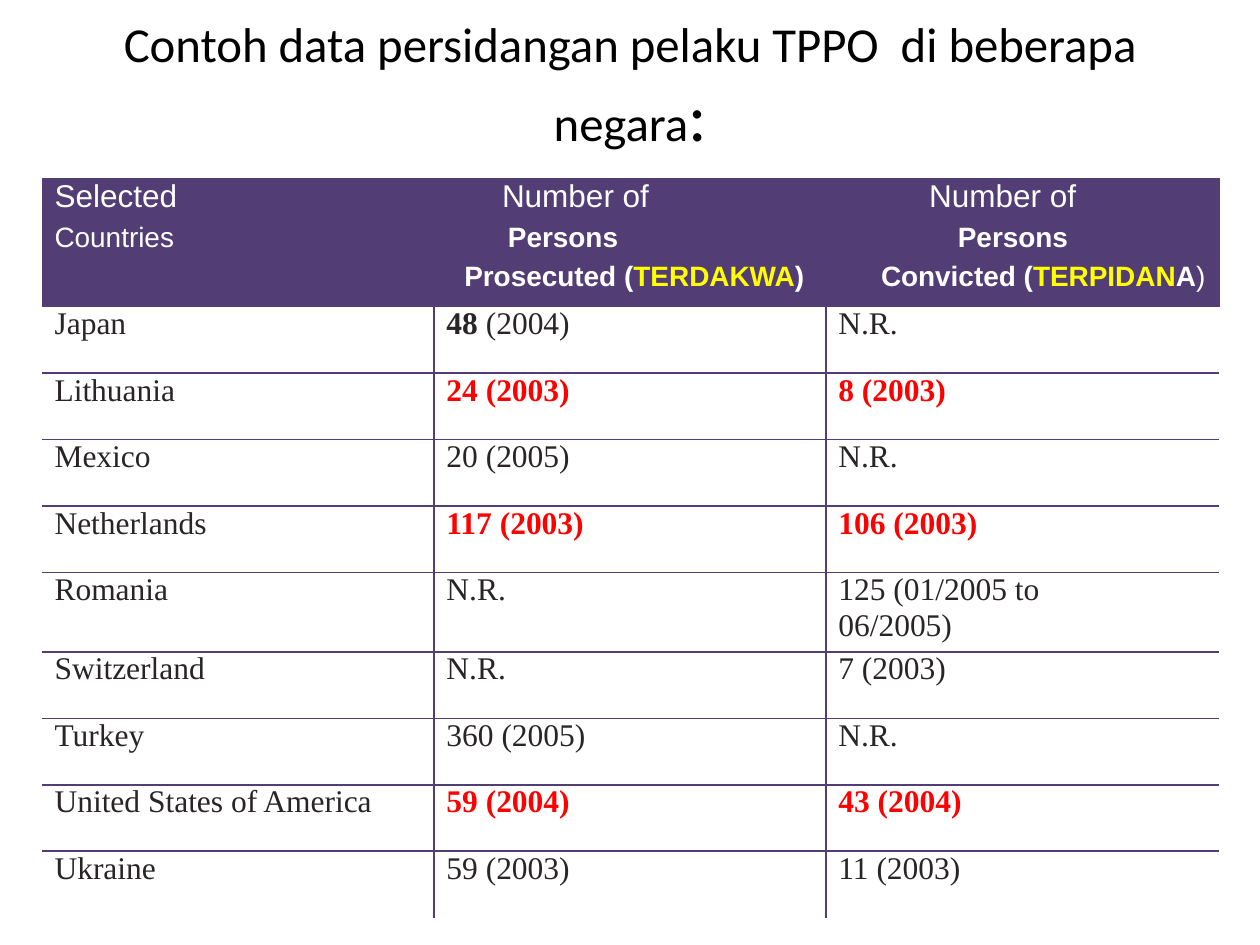
from lxml import etree
from pptx import Presentation
from pptx import util as u
from pptx.dml.color import RGBColor
from pptx.enum import text
from pptx.oxml import ns

PURPLE, INK, RED, WHITE, YELLOW = "523D75", "292425", "FF0000", "FFFFFF", "FFFF00"
COLUMN_WIDTHS = [7.9, 7.9, 7.92]
HEADER_HEIGHT, ROW_HEIGHT, TALL_HEIGHT = 2.58, 1.34, 1.6
HEADER_FONT = {"name": "Arial", "size": u.Pt(16), "bold": True}
BODY_FONT = {"name": "Times New Roman", "size": u.Pt(18), "bold": False}
LARGE = {"size": u.Pt(18), "bold": False}
PLAIN = {"bold": False}

HEADER = [
    ([9.02, 17.63], [("Selected\tNumber of\tNumber of", WHITE, LARGE)]),
    ([9.14, 18.21], [("Countries", WHITE, PLAIN), ("\tPersons\tPersons", WHITE, {})]),
    ([8.26, 16.66], [("\tProsecuted (", WHITE, {}), ("TERDAKWA", YELLOW, {}),
                     (")\tConvicted (", WHITE, {}), ("TERPIDAN", YELLOW, {}),
                     ("A", WHITE, {}), (")", WHITE, PLAIN)]),
]
COUNTRIES = [
    ("Japan", "48 (2004)", "N.R."),
    ("Lithuania", "24 (2003)", "8 (2003)"),
    ("Mexico", "20 (2005)", "N.R."),
    ("Netherlands", "117 (2003)", "106 (2003)"),
    ("Romania", "N.R.", "125 (01/2005 to\n06/2005)"),
    ("Switzerland", "N.R.", "7 (2003)"),
    ("Turkey", "360 (2005)", "N.R."),
    ("United States of America", "59 (2004)", "43 (2004)"),
    ("Ukraine", "59 (2003)", "11 (2003)"),
]
HIGHLIGHTED = {"Lithuania", "Netherlands", "United States of America"}


def color(value):
    """Turn a hex string into a colour."""
    return RGBColor.from_string(value)


def add_span(para, words, ink, *formats):
    """Add a run with its colour and font formats."""
    span = para.add_run()
    span.text = words
    span.font.color.rgb = color(ink)
    for values in formats:
        for name, value in values.items():
            setattr(span.font, name, value)


def add_tabs(para, stops):
    """Give a paragraph left tab stops at the given centimetres."""
    tab_list = etree.SubElement(para._p.get_or_add_pPr(), ns.qn("a:tabLst"))
    for stop in stops:
        etree.SubElement(tab_list, ns.qn("a:tab"), pos=str(u.Cm(stop)), algn="l")


def add_paragraph(cell, first, space):
    """Return the first or a further paragraph of a cell."""
    frame = cell.text_frame
    para = frame.paragraphs[0] if first else frame.add_paragraph()
    para.space_before = u.Pt(space)
    return para


def style_cell(cell, lined_sides, fill=None):
    """Set the margins, borders and fill of a cell."""
    margins = {"margin_left": u.Cm(0.25), "margin_right": 0, "margin_top": 0, "margin_bottom": 0}
    for name, value in margins.items():
        setattr(cell, name, value)
    properties = cell._tc.get_or_add_tcPr()
    for side in "LRTB":
        line = etree.SubElement(properties, ns.qn(f"a:ln{side}"), w=str(u.Pt(1)))
        if side in lined_sides:
            solid = etree.SubElement(line, ns.qn("a:solidFill"))
            etree.SubElement(solid, ns.qn("a:srgbClr"), val=PURPLE)
        else:
            etree.SubElement(line, ns.qn("a:noFill"))
    if fill:
        cell.fill.solid()
        cell.fill.fore_color.rgb = color(fill)
    else:
        cell.fill.background()


def fill_header(table):
    """Merge the top row and write the column headings."""
    for cell in table.rows[0].cells:
        style_cell(cell, "RTB", PURPLE)
    heading = table.cell(0, 0)
    heading.merge(table.cell(0, len(COLUMN_WIDTHS) - 1))
    for index, (stops, spans) in enumerate(HEADER):
        para = add_paragraph(heading, index == 0, 4.7)
        add_tabs(para, stops)
        for words, ink, formats in spans:
            add_span(para, words, ink, HEADER_FONT, formats)


def fill_country(table, row, values):
    """Write one country with its two counts."""
    last_row, last_column = len(COUNTRIES), len(values) - 1
    for column, value in enumerate(values):
        sides = "T" + "L" * (column > 0) + "R" * (column < last_column) + "B" * (row < last_row)
        cell = table.cell(row, column)
        style_cell(cell, sides)
        marked = column > 0 and values[0] in HIGHLIGHTED
        ink = RED if marked else INK
        for index, line in enumerate(value.split("\n")):
            para = add_paragraph(cell, index == 0, 0.3 if index else 3.2)
            if line.startswith("48 "):
                add_span(para, "48 ", ink, BODY_FONT, {"bold": True})
                line = line.removeprefix("48 ")
            add_span(para, line, ink, BODY_FONT, {"bold": marked})


def add_country_table(page):
    """Add the table of prosecuted and convicted persons."""
    heights = [HEADER_HEIGHT] + [
        TALL_HEIGHT if "\n" in values[-1] else ROW_HEIGHT for values in COUNTRIES]
    table = page.shapes.add_table(
        len(heights), len(COLUMN_WIDTHS), u.Cm(0.85), u.Cm(3.6),
        u.Cm(sum(COLUMN_WIDTHS)), u.Cm(sum(heights))).table
    table.first_row = table.horz_banding = False
    for column, width in zip(table.columns, COLUMN_WIDTHS):
        column.width = u.Cm(width)
    for row, height in zip(table.rows, heights):
        row.height = u.Cm(height)
    fill_header(table)
    for row, values in enumerate(COUNTRIES, start=1):
        fill_country(table, row, values)


def set_title(page):
    """Place and write the title."""
    title = page.shapes.title
    box = {"left": 0.64, "top": 0.43, "width": 24.13, "height": 2.54}
    for name, value in box.items():
        setattr(title, name, u.Cm(value))
    frame = title.text_frame
    settings = {"word_wrap": True, "auto_size": text.MSO_AUTO_SIZE.NONE,
                "vertical_anchor": text.MSO_ANCHOR.MIDDLE}
    for name, value in settings.items():
        setattr(frame, name, value)
    para = frame.paragraphs[0]
    para.alignment = text.PP_ALIGN.CENTER
    for words, size in [("Contoh data persidangan pelaku TPPO  di beberapa negara", 27.9),
                        (":", 39.6)]:
        add_span(para, words, "000000", {"name": "Calibri", "size": u.Pt(size)})


def main():
    """Build and save the deck."""
    deck = Presentation()
    deck.slide_width, deck.slide_height = u.Cm(25.4), u.Cm(19.05)
    page = deck.slides.add_slide(deck.slide_layouts.get_by_name("Title Only"))
    set_title(page)
    add_country_table(page)
    deck.save("out.pptx")


if __name__ == "__main__":
    main()
